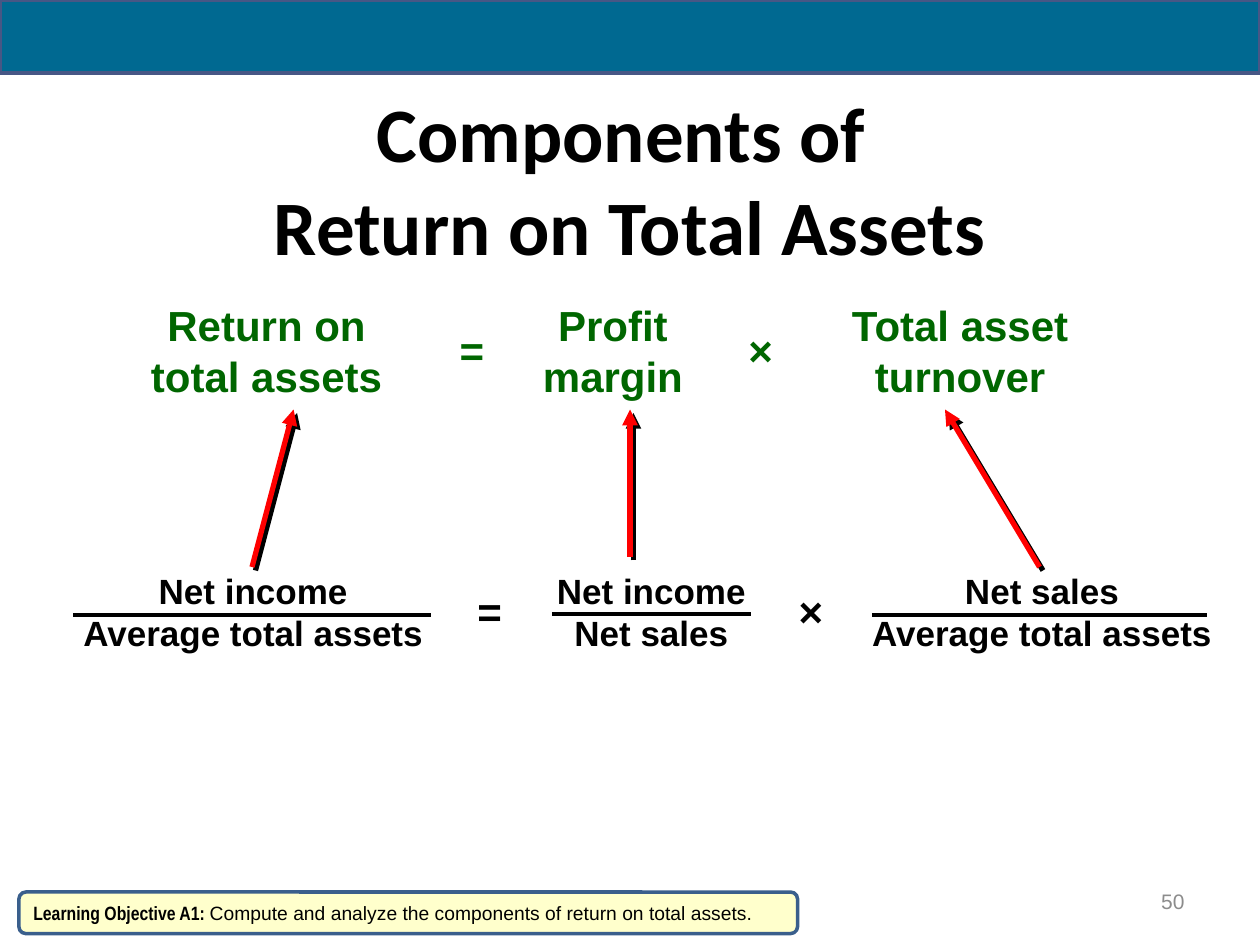
from lxml.etree import SubElement
from pptx import Presentation
from pptx.dml.color import RGBColor
from pptx.enum.shapes import MSO_CONNECTOR, MSO_SHAPE
from pptx.enum.text import MSO_ANCHOR, PP_ALIGN
from pptx.oxml.ns import qn
from pptx.util import Inches, Pt

GREEN, BLACK, RED = "006600", "000000", "FF0000"


def write(frame, text, size=24, color=BLACK, bold=True, font="Arial",
          align=PP_ALIGN.CENTER, anchor=MSO_ANCHOR.TOP, wrap=True):
    """Fill a frame; text is a string or a list of (text, font, bold) runs."""
    frame.word_wrap = wrap
    frame.vertical_anchor = anchor
    runs = [(text, font, bold)] if isinstance(text, str) else text
    paragraph = frame.paragraphs[0]
    for words, face, heavy in runs:
        for i, line in enumerate(words.split("\n")):
            if i:
                paragraph.add_line_break()
            run = paragraph.add_run()
            run.text = line
            run.font.name = face
            run.font.size = Pt(size)
            run.font.bold = heavy
            run.font.color.rgb = RGBColor.from_string(color)
    paragraph.alignment = align


def draw_line(start, end, color=BLACK, width=2.25, arrow=False):
    """Draw a straight line, or an arrow with a hard offset shadow."""
    line = slide.shapes.add_connector(
        MSO_CONNECTOR.STRAIGHT, *[Inches(v) for v in (*start, *end)])
    line.line.color.rgb = RGBColor.from_string(color)
    line.line.width = Pt(width)
    properties = line._element.spPr
    if arrow:
        SubElement(properties.find(qn("a:ln")), qn("a:tailEnd"), type="triangle")
    effects = SubElement(properties, qn("a:effectLst"))
    if arrow:
        shadow = SubElement(effects, qn("a:outerShdw"), dist=str(Pt(2.8)),
                            dir="2700000", algn="ctr", rotWithShape="0")
        SubElement(shadow, qn("a:srgbClr"), val=BLACK)


prs = Presentation()
prs.slide_width, prs.slide_height = Inches(10), Inches(7.5)
slide = prs.slides.add_slide(prs.slide_layouts[6])

# Title
title = slide.shapes.add_textbox(Inches(0.5), Inches(0.75), Inches(9), Inches(1.33))
write(title.text_frame, "Components of \nReturn on Total Assets", size=44,
      font="Calibri", anchor=MSO_ANCHOR.MIDDLE)

# Ratio names
for left, width, name in [(0.92, 2.39, "Return on\ntotal assets"),
                          (4.06, 1.61, "Profit\nmargin"),
                          (6.41, 2.42, "Total asset\nturnover")]:
    ratio = slide.shapes.add_textbox(Inches(left), Inches(2.33), Inches(width), Inches(0.91))
    write(ratio.text_frame, name, color=GREEN)

# Operators of both equations
for left, top, width, sign, color in [(3.55, 2.53, 0.49, "=", GREEN),
                                      (5.84, 2.53, 0.49, "×", GREEN),
                                      (3.69, 4.6, 0.4, "=", BLACK),
                                      (6.24, 4.6, 0.4, "×", BLACK)]:
    operator = slide.shapes.add_textbox(Inches(left), Inches(top), Inches(width), Inches(0.5))
    write(operator.text_frame, sign, color=color, align=PP_ALIGN.LEFT, wrap=False)

# Fractions with their bars
for left, width, fraction, bar_start, bar_end, bar_y in [
        (0.56, 2.9, "Net income\nAverage total assets", 0.58, 3.42, 4.88),
        (4.32, 1.7, "Net income\nNet sales", 4.38, 5.96, 4.87),
        (6.82, 2.9, "Net sales\nAverage total assets", 6.92, 9.58, 4.88)]:
    terms = slide.shapes.add_textbox(Inches(left), Inches(4.47), Inches(width), Inches(0.77))
    write(terms.text_frame, fraction, size=20, wrap=False)
    draw_line((bar_start, bar_y), (bar_end, bar_y))

# Arrows from fractions up to ratio names
for start, end_x in [((5, 4.42), 5), ((8.25, 4.5), 7.5), ((2, 4.5), 2.33)]:
    draw_line(start, (end_x, 3.25), color=RED, width=3, arrow=True)

# Top band and learning objective box
band = slide.shapes.add_shape(MSO_SHAPE.RECTANGLE, 0, 0, Inches(10), Inches(0.58))
objective = slide.shapes.add_shape(MSO_SHAPE.ROUNDED_RECTANGLE, Inches(0.15), Inches(7.08),
                                   Inches(6.18), Inches(0.33))
for panel, fill, outline, weight in [(band, "006991", "475785", 2.25),
                                     (objective, "FFFFCC", "3A5F8C", 2)]:
    panel.shadow.inherit = False
    panel.fill.solid()
    panel.fill.fore_color.rgb = RGBColor.from_string(fill)
    panel.line.color.rgb = RGBColor.from_string(outline)
    panel.line.width = Pt(weight)
write(objective.text_frame,
      [("Learning Objective A1: ", "Arial Narrow", True),
       ("Compute and analyze the components of return on total assets.", "Arial", False)],
      size=11, align=PP_ALIGN.LEFT, anchor=MSO_ANCHOR.MIDDLE)

# Page number
page = slide.shapes.add_textbox(Inches(7.17), Inches(6.95), Inches(2.33), Inches(0.4))
write(page.text_frame, "50", size=12, color="8C8C8C", bold=False,
      align=PP_ALIGN.RIGHT, anchor=MSO_ANCHOR.MIDDLE)

prs.save("out.pptx")
